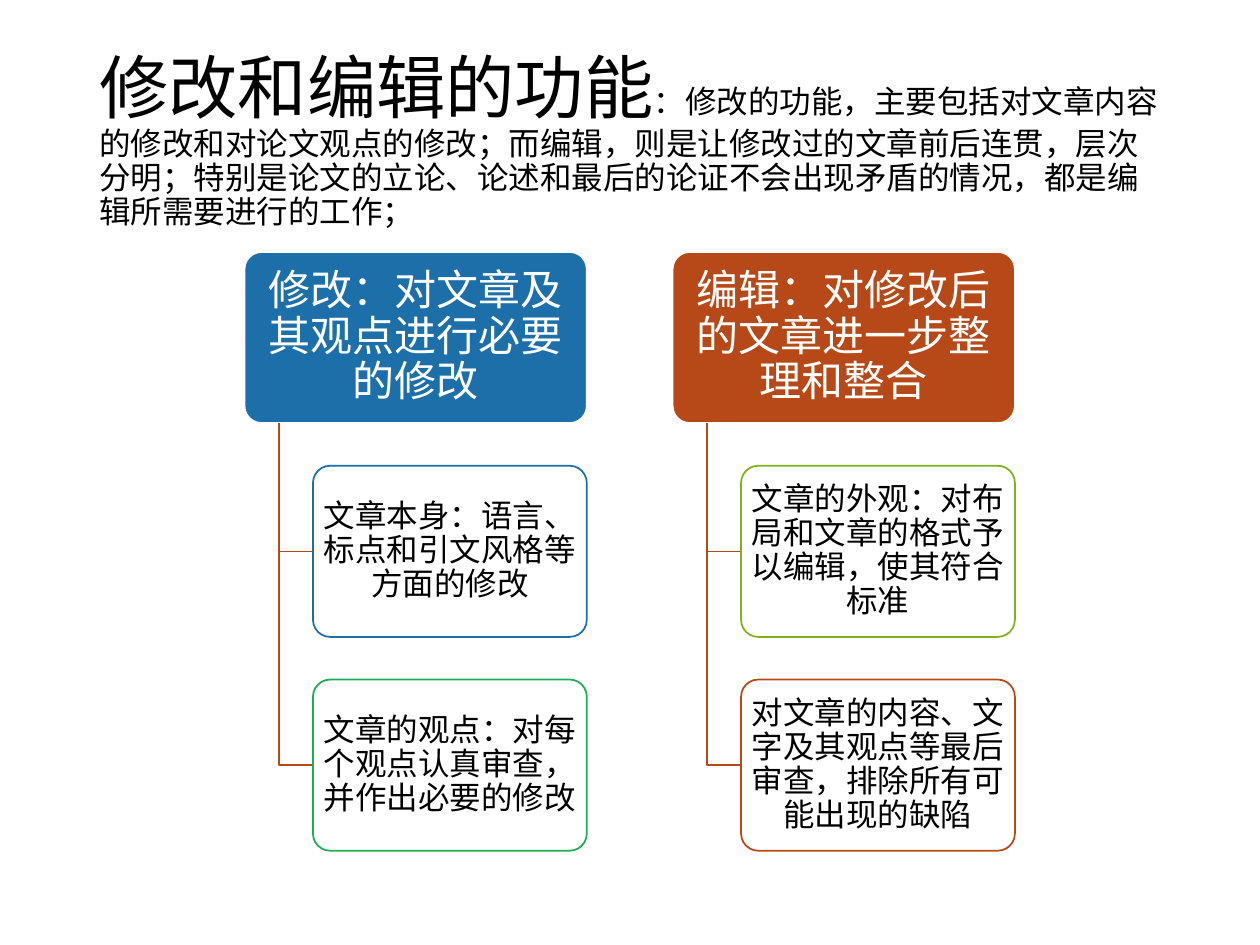
from dataclasses import dataclass

from lxml.etree import SubElement
from pptx import Presentation
from pptx.dml.color import RGBColor
from pptx.enum.shapes import MSO_SHAPE
from pptx.enum.text import MSO_ANCHOR, PP_ALIGN
from pptx.oxml.ns import qn
from pptx.util import Cm, Pt

FONT = "Times New Roman"
WHITE, BLACK = "FFFFFF", "000000"
BLUE, RUST, GREEN, LIME = "1D6FA9", "B74919", "1CAE53", "7FB21A"

# Tree grid in cm
LEFT, TOP = 4.93, 5.08
COL_STEP, ROW_STEP = 8.63, 4.31
HEAD_W, LEAF_W, BOX_H = 6.9, 5.52, 3.45
STEM_IN, LEAF_IN = 0.69, 1.38


@dataclass
class Leaf:
    text: str
    edge: str


@dataclass
class Branch:
    text: str
    fill: str
    leaves: list[Leaf]


BRANCHES = [
    Branch("修改：对文章及其观点进行必要的修改", BLUE, [
        Leaf("文章本身：语言、标点和引文风格等方面的修改", BLUE),
        Leaf("文章的观点：对每个观点认真审查，并作出必要的修改", GREEN),
    ]),
    Branch("编辑：对修改后的文章进一步整理和整合", RUST, [
        Leaf("文章的外观：对布局和文章的格式予以编辑，使其符合标准", LIME),
        Leaf("对文章的内容、文字及其观点等最后审查，排除所有可能出现的缺陷", RUST),
    ]),
]
TITLE = "修改和编辑的功能"
INTRO = ("：修改的功能，主要包括对文章内容的修改和对论文观点的修改；"
         "而编辑，则是让修改过的文章前后连贯，层次分明；"
         "特别是论文的立论、论述和最后的论证不会出现矛盾的情况，"
         "都是编辑所需要进行的工作；")


def paint(item, color: str) -> None:
    """Give a fill or line format a solid colour."""
    item.solid()
    item.fore_color.rgb = RGBColor.from_string(color)


def write(frame, text: str, *, size: float, color: str = BLACK,
          align=PP_ALIGN.LEFT, pad: tuple[float, float] = (0.25, 0.13)) -> None:
    """Add a run to the first paragraph of a text frame."""
    frame.word_wrap = True
    frame.vertical_anchor = MSO_ANCHOR.MIDDLE
    frame.margin_left = frame.margin_right = Cm(pad[0])
    frame.margin_top = frame.margin_bottom = Cm(pad[1])
    para = frame.paragraphs[0]
    para.alignment = align
    para.line_spacing = 0.9
    run = para.add_run()
    run.text = text
    run.font.name = FONT
    run.font.size = Pt(size)
    paint(run.font.fill, color)


def add_box(slide, x: float, y: float, width: float, text: str, *,
            fill: str, edge: str, size: float, color: str, pad: float):
    """Draw a rounded box with centred text."""
    box = slide.shapes.add_shape(MSO_SHAPE.ROUNDED_RECTANGLE,
                                 Cm(x), Cm(y), Cm(width), Cm(BOX_H))
    box.adjustments[0] = 0.1
    box.shadow.inherit = False
    paint(box.fill, fill)
    paint(box.line.fill, edge)
    box.line.width = Pt(1)
    write(box.text_frame, text, size=size, color=color,
          align=PP_ALIGN.CENTER, pad=(pad, 0.08))
    return box


def add_elbow(slide, x: float, top: float, right: float, low: float) -> None:
    """Draw an open line down from a head and across to a leaf."""
    pen = slide.shapes.build_freeform(Cm(x), Cm(top))
    pen.add_line_segments([(Cm(x), Cm(low)), (Cm(right), Cm(low))], close=False)
    elbow = pen.convert_to_shape()
    elbow.shadow.inherit = False
    elbow.fill.background()
    paint(elbow.line.fill, RUST)
    elbow.line.width = Pt(1)


def add_branch(slide, branch: Branch, x: float) -> None:
    """Draw a head with its leaves below."""
    add_box(slide, x, TOP, HEAD_W, branch.text, fill=branch.fill,
            edge=WHITE, size=24, color=WHITE, pad=0.13)
    for row, leaf in enumerate(branch.leaves, start=1):
        y = TOP + row * ROW_STEP
        add_elbow(slide, x + STEM_IN, TOP + BOX_H, x + LEAF_IN, y + BOX_H / 2)
        box = add_box(slide, x + LEAF_IN, y, LEAF_W, leaf.text, fill=WHITE,
                      edge=leaf.edge, size=18, color=BLACK, pad=0.1)
        tint = box.fill._xPr.find(qn("a:solidFill"))[0]
        SubElement(tint, qn("a:alpha"), val="90000")


def main() -> None:
    deck = Presentation()
    deck.slide_width, deck.slide_height = Cm(25.4), Cm(19.05)
    slide = deck.slides.add_slide(deck.slide_layouts[6])

    # Title and intro share one paragraph
    frame = slide.shapes.add_textbox(Cm(1.75), Cm(1.02),
                                     Cm(21.9), Cm(3.68)).text_frame
    write(frame, TITLE, size=39.6)
    write(frame, INTRO, size=18)

    # Two branches side by side
    for col, branch in enumerate(BRANCHES):
        add_branch(slide, branch, LEFT + col * COL_STEP)

    deck.save("out.pptx")


if __name__ == "__main__":
    main()
